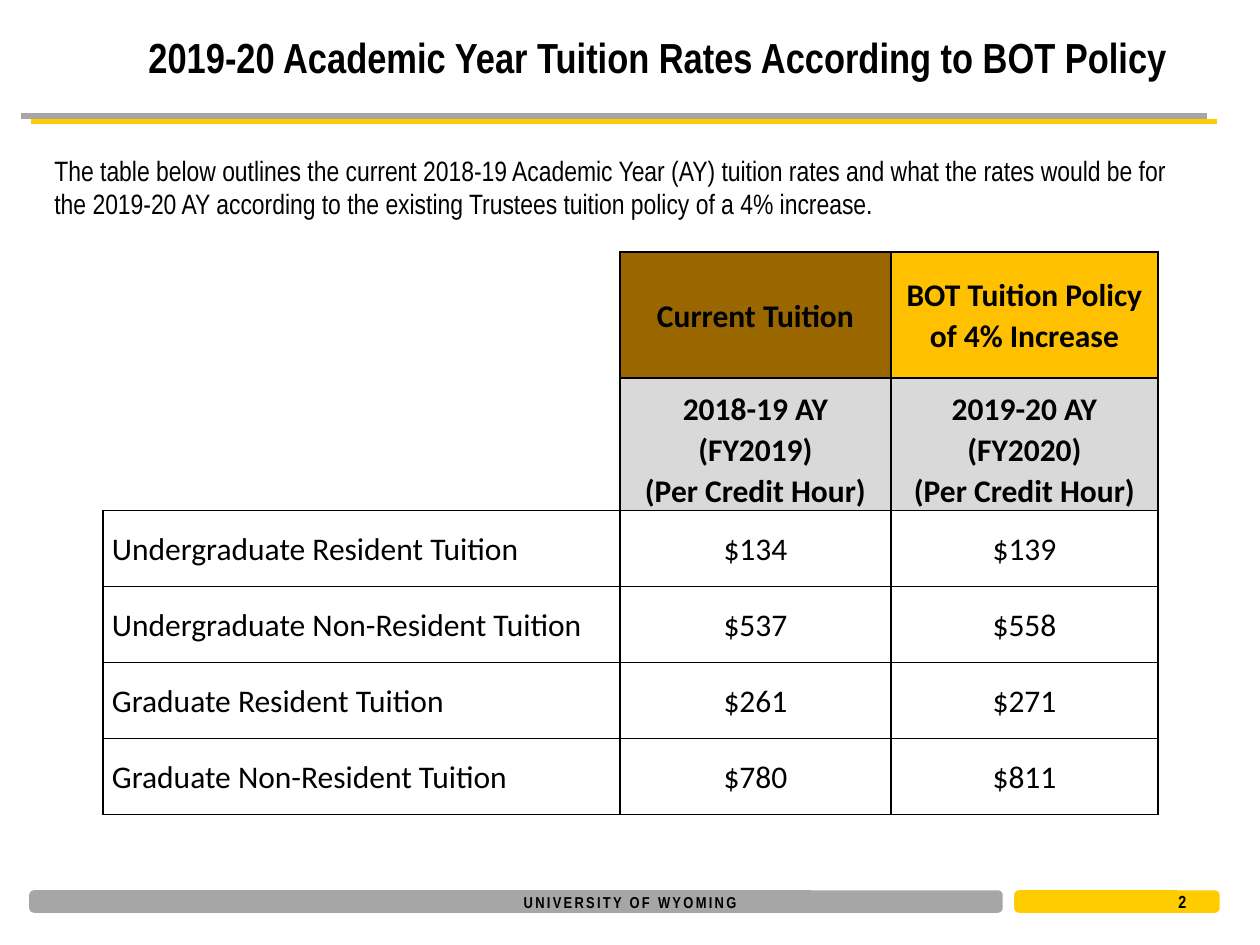
from lxml import etree
from pptx import Presentation, util as u
from pptx.dml.color import RGBColor
from pptx.enum import shapes, text
from pptx.oxml import ns

PX = 914400 / 126
NARROW, BODY = "Arial Narrow", "Calibri"
BLACK, GRAY, GOLD = "000000", "A6A6A6", "FFCC00"
BROWN, AMBER, PALE = "996600", "FFC000", "D9D9D9"
LEFT, CENTER = text.PP_ALIGN.LEFT, text.PP_ALIGN.CENTER
TOP, MIDDLE, BOTTOM = (text.MSO_ANCHOR.TOP, text.MSO_ANCHOR.MIDDLE,
                       text.MSO_ANCHOR.BOTTOM)

# Each column: heading lines, year lines, heading fill
COLUMN_HEADS = [
    (["Current Tuition"], ["2018-19 AY", "(FY2019)"], BROWN),
    (["BOT Tuition Policy of 4% Increase"], ["2019-20 AY", "(FY2020)"], AMBER),
]
RATES = [
    ("Undergraduate Resident Tuition", "$134", "$139"),
    ("Undergraduate Non-Resident Tuition", "$537", "$558"),
    ("Graduate Resident Tuition", "$261", "$271"),
    ("Graduate Non-Resident Tuition", "$780", "$811"),
]


def px(length):
    return u.Emu(round(length * PX))


def color(hex_value):
    return RGBColor.from_string(hex_value)


def add_run(paragraph, words, size, font, bold=False):
    run = paragraph.add_run()
    run.text = words
    run.font.size = u.Pt(size)
    run.font.name = font
    run.font.bold = bold
    run.font.color.rgb = color(BLACK)
    return run


def add_label(slide, box, words, size, bold=True, anchor=MIDDLE, align=LEFT):
    frame = slide.shapes.add_textbox(*map(px, box)).text_frame
    frame.word_wrap = True
    frame.vertical_anchor = anchor
    frame.paragraphs[0].alignment = align
    return add_run(frame.paragraphs[0], words, size, NARROW, bold)


def add_header(slide, left, top, width):
    """Title above a gray rule with a hard gold shadow."""
    add_label(slide, (left + 115, top, 1103, 76),
              "2019-20 Academic Year Tuition Rates According to BOT Policy", 24)
    rule_y = top + 97
    rule = slide.shapes.add_connector(
        shapes.MSO_CONNECTOR.STRAIGHT,
        px(left), px(rule_y), px(left + width), px(rule_y))
    rule.line.color.rgb = color(GRAY)
    rule.line.width = u.Pt(3)
    effects = etree.SubElement(rule._element.spPr, ns.qn("a:effectLst"))
    shadow = etree.SubElement(
        effects, ns.qn("a:outerShdw"), dist=str(u.Pt(6.7)),
        dir=str(27 * 60000), algn="ctr", rotWithShape="0")
    etree.SubElement(shadow, ns.qn("a:srgbClr"), val=GOLD)


def add_footer(slide, left, top, width, height):
    """Gray name bar and gold page-number bar."""
    gold_width = 202
    bars = [(left, 970, GRAY), (left + width - gold_width, gold_width, GOLD)]
    for bar_left, bar_width, hex_value in bars:
        bar = slide.shapes.add_shape(
            shapes.MSO_SHAPE.ROUNDED_RECTANGLE,
            *map(px, (bar_left, top, bar_width, height)))
        bar.shadow.inherit = False
        bar.fill.solid()
        bar.fill.fore_color.rgb = color(hex_value)
        bar.line.color.rgb = color(hex_value)
        bar.line.width = u.Pt(2)
    name = add_label(slide, (left + 469, top - 6, 260, 32),
                     "UNIVERSITY OF WYOMING", 9, align=CENTER)
    name.font._element.set("spc", "130")
    add_label(slide, (left + 1135, top - 2, 63, 24), "2", 10)


def set_borders(cell, sides):
    """Draw the sides named in a string of L, R, T, B and clear the others."""
    properties = cell._tc.get_or_add_tcPr()
    for place, side in enumerate("LRTB"):
        line = etree.Element(ns.qn("a:ln" + side), w=str(u.Pt(1)))
        if side in sides:
            fill = etree.SubElement(line, ns.qn("a:solidFill"))
            etree.SubElement(fill, ns.qn("a:srgbClr"), val=BLACK)
        else:
            etree.SubElement(line, ns.qn("a:noFill"))
        properties.insert(place, line)


def fill_cell(cell, lines=(), fill=None, align=CENTER, anchor=MIDDLE,
              bold=False, sides="LRTB"):
    cell.margin_left = cell.margin_right = px(9)
    cell.margin_top = cell.margin_bottom = 0
    cell.vertical_anchor = anchor
    if fill:
        cell.fill.solid()
        cell.fill.fore_color.rgb = color(fill)
    else:
        cell.fill.background()
    set_borders(cell, sides)
    frame = cell.text_frame
    for number, line in enumerate(lines):
        paragraph = frame.add_paragraph() if number else frame.paragraphs[0]
        paragraph.alignment = align
        paragraph.line_spacing = 1.07
        add_run(paragraph, line, 18, BODY, bold)


def add_rate_table(slide, left, top):
    widths = [517, 271, 267]
    heights = [126, 92, 25] + [76] * len(RATES)
    table = slide.shapes.add_table(
        len(heights), len(widths),
        *map(px, (left, top, sum(widths), sum(heights)))).table
    table.first_row = table.horz_banding = False
    for column, width in zip(table.columns, widths):
        column.width = px(width)
    for row, height in zip(table.rows, heights):
        row.height = px(height)

    for row, sides in enumerate(["R", "R", "RB"]):
        fill_cell(table.cell(row, 0), sides=sides)
    for column, (heading, year, fill) in enumerate(COLUMN_HEADS, 1):
        fill_cell(table.cell(0, column), heading, fill, bold=True)
        fill_cell(table.cell(1, column), year, PALE, anchor=BOTTOM,
                  bold=True, sides="LRT")
        fill_cell(table.cell(2, column), ["(Per Credit Hour)"], PALE,
                  bold=True, sides="LRB")
    for row, rates in enumerate(RATES, 3):
        for column, words in enumerate(rates):
            fill_cell(table.cell(row, column), [words],
                      align=CENTER if column else LEFT)


def main():
    deck = Presentation()
    deck.slide_width, deck.slide_height = px(1260), px(945)
    slide = deck.slides.add_slide(deck.slide_layouts[6])
    add_header(slide, 21, 19, 1186)
    add_footer(slide, 31, 892, 1187, 19)
    add_label(slide, (42, 147, 1172, 81),
              "The table below outlines the current 2018-19 Academic Year (AY) "
              "tuition rates and what the rates would be for the 2019-20 AY "
              "according to the existing Trustees tuition policy of a 4% "
              "increase.", 16, bold=False, anchor=TOP)
    add_rate_table(slide, 103, 252)
    deck.save("out.pptx")


if __name__ == "__main__":
    main()
